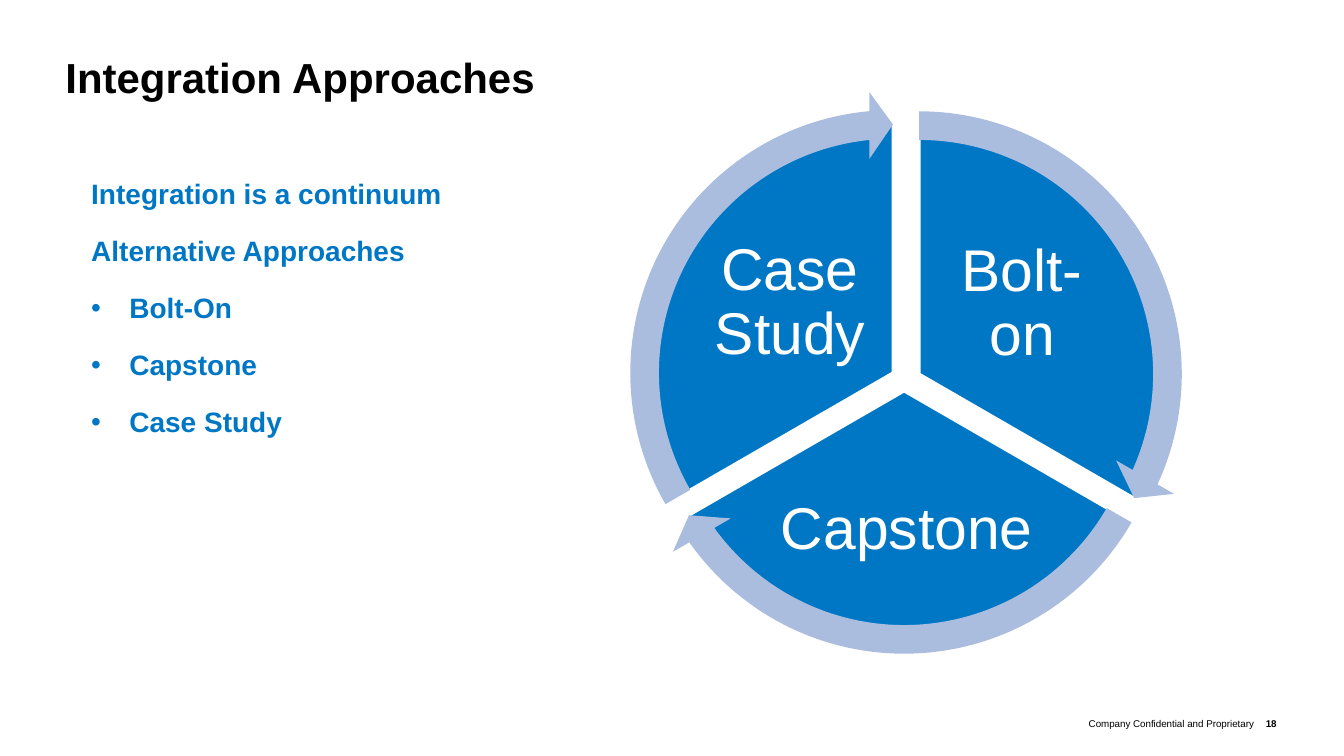
from lxml import etree
from pptx import Presentation
from pptx.dml.color import RGBColor
from pptx.enum.shapes import MSO_SHAPE
from pptx.enum.text import MSO_ANCHOR, PP_ALIGN
from pptx.oxml.ns import qn
from pptx.util import Cm, Pt

PIE, ARROW = MSO_SHAPE.PIE, MSO_SHAPE.CIRCULAR_ARROW
TOP, MIDDLE = MSO_ANCHOR.TOP, MSO_ANCHOR.MIDDLE
LEFT, CENTER, RIGHT = PP_ALIGN.LEFT, PP_ALIGN.CENTER, PP_ALIGN.RIGHT

FONT = "Arial"
COLORS = {"text": "000000", "blue": "0077C5", "pale": "ABBDDF", "white": "FFFFFF"}
ANGLE_UNIT = 0.6  # adjustment value of one degree

POINTS = [
    ("Integration is a continuum", False),
    ("Alternative Approaches", False),
    ("Bolt-On", True),
    ("Capstone", True),
    ("Case Study", True),
]

# Cycle steps: label, pie offset, label box offset and size in cm, start angle
STEPS = [
    ("Bolt-on", (1.42, 0.81), (8.08, 3.5, 4.52, 3.76), 270),
    ("Capstone", (1.04, 1.24), (4.04, 9.44, 6.78, 3.3), 30),
    ("Case Study", (0.76, 0.78), (2.23, 3.48, 4.52, 3.76), 150),
]
SWEEP = 120
PIE_SIZE, RING_SIZE = 12.65, 14.2
RING_THICKNESS, HEAD_ANGLE, HEAD_WIDTH = 0.05085, 3.275, 0.0593


def color(name):
    return RGBColor.from_string(COLORS[name])


def add_frame(page, box, anchor=TOP, inset_x=0.25, inset_y=0.13):
    frame = page.shapes.add_textbox(*map(Cm, box)).text_frame
    frame.word_wrap = True
    frame.vertical_anchor = anchor
    frame.margin_left = frame.margin_right = Cm(inset_x)
    frame.margin_top = frame.margin_bottom = Cm(inset_y)
    return frame


def write(para, text, size, tint, bold=False, align=LEFT, spacing=1.0):
    para.alignment = align
    para.line_spacing = spacing
    span = para.add_run()
    span.text = text
    span.font.name = FONT
    span.font.size = Pt(size)
    span.font.bold = bold
    span.font.color.rgb = color(tint)


def set_indent(para, bulleted):
    left, hanging = (1.59, 0.96) if bulleted else (1.27, 0.64)
    properties = para._p.get_or_add_pPr()
    properties.set("marL", str(Cm(left)))
    properties.set("indent", str(-Cm(hanging)))
    if bulleted:
        tint = etree.SubElement(properties, qn("a:buClr"))
        etree.SubElement(tint, qn("a:srgbClr"), val=COLORS["blue"])
        etree.SubElement(properties, qn("a:buFont"), typeface=FONT)
        etree.SubElement(properties, qn("a:buChar"), char="•")
    else:
        etree.SubElement(properties, qn("a:buNone"))


def add_title(page, box):
    para = add_frame(page, box).paragraphs[0]
    write(para, "Integration Approaches", 30, "text", bold=True, spacing=0.95)


def add_points(page, box):
    frame = add_frame(page, box)
    for index, (text, bulleted) in enumerate(POINTS):
        para = frame.add_paragraph() if index else frame.paragraphs[0]
        set_indent(para, bulleted)
        write(para, text, 20, "blue", bold=True, spacing=0.95)
        if index:
            para.space_before = Pt(18)


def add_round(page, kind, left, top, size, fill, adjustments):
    shape = page.shapes.add_shape(kind, Cm(left), Cm(top), Cm(size), Cm(size))
    shape.shadow.inherit = False
    shape.fill.solid()
    shape.fill.fore_color.rgb = color(fill)
    shape.line.fill.background()
    for index, value in enumerate(adjustments):
        shape.adjustments[index] = value
    return shape


def add_cycle(page, left, top):
    # Slices with their labels
    for label, (pie_x, pie_y), (text_x, text_y, width, height), start in STEPS:
        begin, end = (angle % 360 * ANGLE_UNIT for angle in (start, start + SWEEP))
        pie = add_round(page, PIE, left + pie_x, top + pie_y, PIE_SIZE, "blue", (begin, end))
        pie.line.color.rgb = color("white")
        pie.line.width = Pt(2)
        box = (left + text_x, top + text_y, width, height)
        para = add_frame(page, box, MIDDLE, 0.15, 0.15).paragraphs[0]
        write(para, label, 42, "white", align=CENTER, spacing=0.9)

    # Arrows around the slices, concentric with them
    margin = (RING_SIZE - PIE_SIZE) / 2
    for _, (pie_x, pie_y), _, start in STEPS:
        begin, end = (angle % 360 * ANGLE_UNIT for angle in (start, start + SWEEP))
        add_round(page, ARROW, left + pie_x - margin, top + pie_y - margin, RING_SIZE, "pale",
                  (RING_THICKNESS, HEAD_ANGLE, end - HEAD_ANGLE, begin, HEAD_WIDTH))


def add_footer(page, left, top):
    notice = add_frame(page, (left, top, 6.78, 0.51), MIDDLE, inset_x=0)
    write(notice.paragraphs[0], "Company Confidential and Proprietary", 7, "text", align=RIGHT)
    number = add_frame(page, (left + 6.83, top, 0.99, 0.51), MIDDLE)
    write(number.paragraphs[0], "18", 7, "text", bold=True)


def main():
    deck = Presentation()
    deck.slide_width, deck.slide_height = Cm(33.87), Cm(19.05)
    page = deck.slides.add_slide(deck.slide_layouts[6])
    add_footer(page, 24.82, 17.98)
    add_title(page, (1.4, 1.27, 30.86, 1.52))
    add_points(page, (1.42, 4.37, 30.86, 12.78))
    add_cycle(page, 15.42, 2.29)
    deck.save("out.pptx")


if __name__ == "__main__":
    main()
